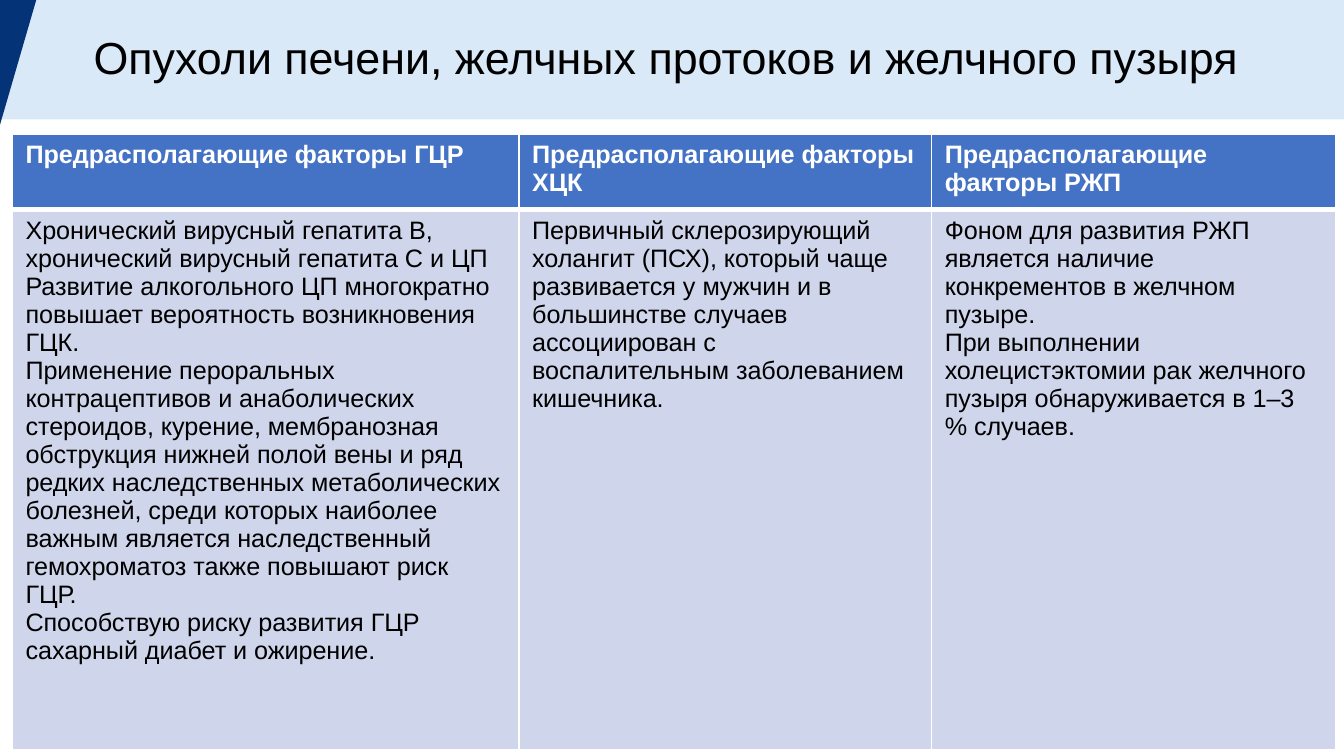
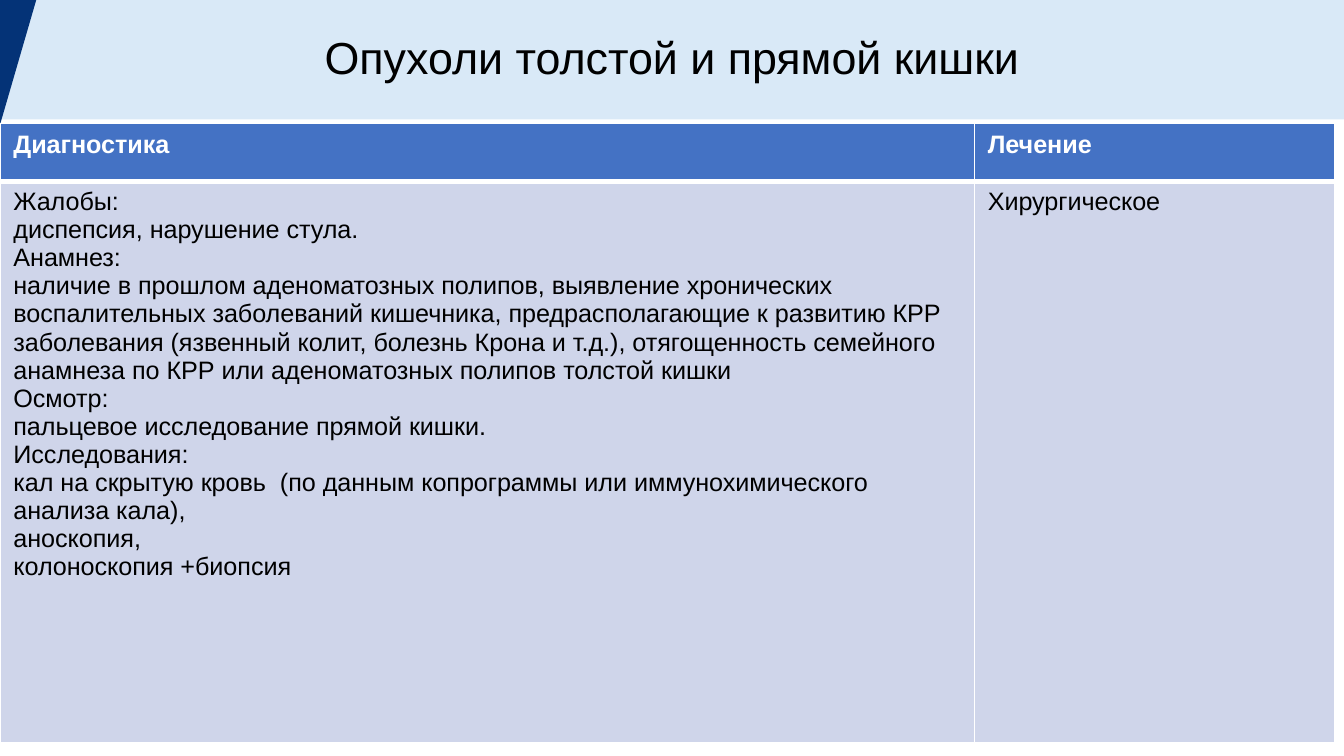
from lxml.etree import SubElement
from pptx import Presentation
from pptx.dml.color import RGBColor
from pptx.enum.shapes import MSO_SHAPE
from pptx.enum.text import MSO_ANCHOR, PP_ALIGN
from pptx.oxml.ns import qn
from pptx.util import Inches, Pt

FONT = "Arial"
COLORS = {
    "band": "D9E9F7",
    "wedge": "043377",
    "head": "4472C4",
    "body": "CFD5EA",
    "white": "FFFFFF",
    "black": "000000",
}
WIDTH = 10
HEIGHT = WIDTH * 9 / 16
BAND = (0, -0.04, WIDTH, 0.93)
WEDGE = (0, 0, 0.27, 0.93)

RISKS = {
    "title": "Опухоли печени, желчных протоков и желчного пузыря ",
    "box": (0.09, 1, 9.85, 4.58),
    "widths": (3.77, 3.07, 3.01),
    "top": 0.56,
    "heads": (
        "Предрасполагающие факторы ГЦР",
        "Предрасполагающие факторы ХЦК",
        "Предрасполагающие факторы РЖП",
    ),
    "cells": (
        (
            "Хронический вирусный гепатита В, хронический вирусный гепатита С и ЦП",
            "Развитие алкогольного ЦП многократно повышает вероятность "
            "возникновения ГЦК.",
            "Применение пероральных контрацептивов и анаболических стероидов, "
            "курение, мембранозная обструкция нижней полой вены и ряд редких "
            "наследственных метаболических болезней, среди которых наиболее "
            "важным является наследственный гемохроматоз также повышают риск ГЦР.",
            "Способствую риску развития ГЦР сахарный диабет и ожирение.",
        ),
        (
            "Первичный склерозирующий холангит (ПСХ), который чаще развивается "
            "у мужчин и в большинстве случаев ассоциирован с воспалительным "
            "заболеванием кишечника.",
        ),
        (
            "Фоном для развития РЖП является наличие конкрементов в желчном пузыре.",
            "При выполнении холецистэктомии рак желчного пузыря обнаруживается "
            "в 1–3 % случаев.",
        ),
    ),
}
COLON = {
    "title": "Опухоли толстой и прямой кишки",
    "box": (0, 0.92, 9.93, 4.61),
    "widths": (7.25, 2.68),
    "top": 0.43,
    "heads": ("Диагностика", "Лечение"),
    "cells": (
        (
            "Жалобы:",
            "диспепсия, нарушение стула.",
            "Анамнез:",
            "наличие в прошлом аденоматозных полипов, выявление хронических "
            "воспалительных заболеваний кишечника, предрасполагающие к развитию "
            "КРР заболевания (язвенный колит, болезнь Крона и т.д.), "
            "отягощенность семейного анамнеза по КРР или аденоматозных полипов "
            "толстой кишки",
            "Осмотр:",
            "пальцевое исследование прямой кишки.",
            "Исследования:",
            "кал на скрытую кровь  (по данным копрограммы или "
            "иммунохимического анализа кала),",
            "аноскопия,",
            "колоноскопия +биопсия",
        ),
        ("Хирургическое",),
    ),
}


def paint(fill, color):
    fill.solid()
    fill.fore_color.rgb = RGBColor.from_string(COLORS[color])


def write(frame, lines, size=13.5, color="black", bold=False, align=PP_ALIGN.LEFT):
    """Fill a text frame with one paragraph per line."""
    frame.word_wrap = True
    for i, line in enumerate(lines):
        para = frame.paragraphs[0] if i == 0 else frame.add_paragraph()
        para.alignment = align
        run = para.add_run()
        run.text = line
        run.font.name = FONT
        run.font.size = Pt(size)
        run.font.bold = bold
        run.font.color.rgb = RGBColor.from_string(COLORS[color])


def finish(shape, color):
    """Give a shape a plain fill with no line or shadow."""
    shape.shadow.inherit = False
    paint(shape.fill, color)
    shape.line.fill.background()


def add_band(slide, box, title):
    band = slide.shapes.add_shape(MSO_SHAPE.RECTANGLE, *map(Inches, box))
    finish(band, "band")
    band.text_frame.vertical_anchor = MSO_ANCHOR.MIDDLE
    write(band.text_frame, [title], size=24, align=PP_ALIGN.CENTER)


def add_wedge(slide, box):
    left, top, width, height = map(Inches, box)
    pen = slide.shapes.build_freeform(left, top + height)
    pen.add_line_segments([(left, top), (left + width, top)], close=True)
    finish(pen.convert_to_shape(), "wedge")


def style(cell, fill, **edges):
    """Draw white cell borders (points by side L, R, T, B), then the fill."""
    props = cell._tc.get_or_add_tcPr()
    for side, width in edges.items():
        line = SubElement(props, qn(f"a:ln{side}"), w=str(Pt(width)))
        solid = SubElement(line, qn("a:solidFill"))
        SubElement(solid, qn("a:srgbClr"), val=COLORS["white"])
    paint(cell.fill, fill)


def add_grid(slide, box, data):
    """Place a table with one header row above one body row."""
    widths = data["widths"]
    grid = slide.shapes.add_table(2, len(widths), *map(Inches, box)).table
    grid.rows[0].height = Inches(data["top"])
    grid.rows[1].height = Inches(box[3] - data["top"])
    for col, width in enumerate(widths):
        grid.columns[col].width = Inches(width)
        head, body = grid.cell(0, col), grid.cell(1, col)
        style(head, "head", L=1, R=1, T=1, B=3)
        style(body, "body", L=1, R=1, T=3, B=1)
        write(head.text_frame, [data["heads"][col]], color="white", bold=True)
        write(body.text_frame, data["cells"][col])


def add_page(deck, data):
    slide = deck.slides.add_slide(deck.slide_layouts[6])
    paint(slide.background.fill, "white")
    add_band(slide, BAND, data["title"])
    add_wedge(slide, WEDGE)
    add_grid(slide, data["box"], data)


def main():
    deck = Presentation()
    deck.slide_width, deck.slide_height = Inches(WIDTH), Inches(HEIGHT)
    for data in (RISKS, COLON):
        add_page(deck, data)
    deck.save("out.pptx")


if __name__ == "__main__":
    main()
